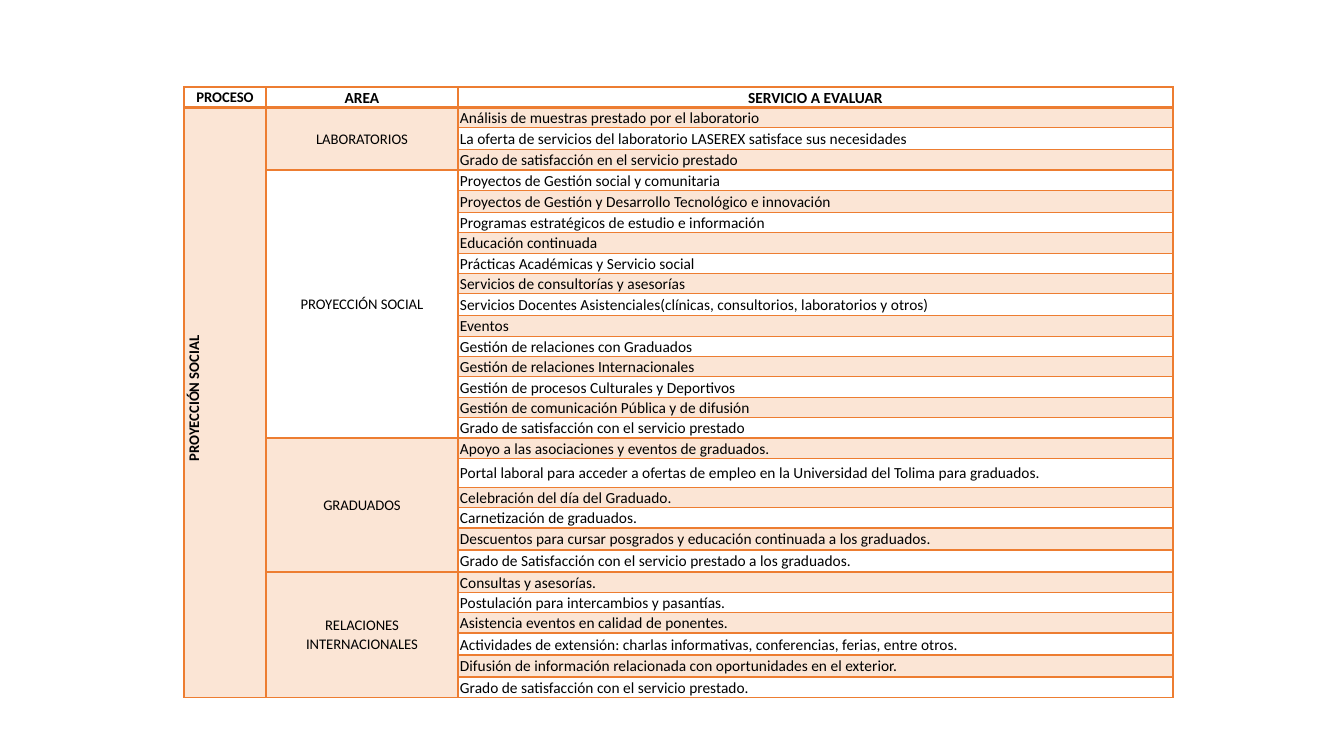
from lxml import etree
from pptx import Presentation
from pptx import util as u
from pptx.dml.color import RGBColor
from pptx.enum import text
from pptx.oxml import ns

HEADERS = [("PROCESO", 10.5), ("AREA", 11), ("SERVICIO A EVALUAR", 11)]
PROCESS = "PROYECCIÓN SOCIAL"
AREAS = [
    ("LABORATORIOS", [
        "Análisis de muestras prestado por el laboratorio",
        "La oferta de servicios del laboratorio LASEREX satisface sus necesidades",
        "Grado de satisfacción en el servicio prestado",
    ]),
    ("PROYECCIÓN SOCIAL", [
        "Proyectos de Gestión social y comunitaria",
        "Proyectos de Gestión y Desarrollo Tecnológico e innovación",
        "Programas estratégicos de estudio e información",
        "Educación continuada",
        "Prácticas Académicas y Servicio social",
        "Servicios de consultorías y asesorías",
        "Servicios Docentes Asistenciales(clínicas, consultorios, laboratorios y otros)",
        "Eventos",
        "Gestión de relaciones con Graduados",
        "Gestión de relaciones Internacionales",
        "Gestión de procesos Culturales y Deportivos",
        "Gestión de comunicación Pública y de difusión",
        "Grado de satisfacción con el servicio prestado",
    ]),
    ("GRADUADOS", [
        "Apoyo a las asociaciones y eventos de graduados.",
        "Portal laboral para acceder a ofertas de empleo en la Universidad del Tolima para graduados.",
        "Celebración del día del Graduado.",
        "Carnetización de graduados.",
        "Descuentos para cursar posgrados y educación continuada a los graduados.",
        "Grado de Satisfacción con el servicio prestado a los graduados.",
    ]),
    ("RELACIONES INTERNACIONALES", [
        "Consultas y asesorías.",
        "Postulación para intercambios y pasantías.",
        "Asistencia eventos en calidad de ponentes.",
        "Actividades de extensión: charlas informativas, conferencias, ferias, entre otros.",
        "Difusión de información relacionada con oportunidades en el exterior.",
        "Grado de satisfacción con el servicio prestado.",
    ]),
]
COLUMN_WIDTHS = [82, 192, 715]
ROW_HEIGHT = 20
TALL_ROWS = {2: 22, 5: 22, 10: 22, 18: 29, 21: 22, 22: 22, 26: 22, 27: 22}
BOTTOM_ROWS = (16, 28)
ORANGE = RGBColor(0xED, 0x7D, 0x31)
BLACK = RGBColor(0, 0, 0)
CENTER = text.PP_ALIGN.CENTER


def px(length):
    return u.Emu(round(length * 914400 / 100.8))


def write(cell, words, size, bold=False, align=None):
    paragraph = cell.text_frame.paragraphs[0]
    paragraph.alignment = align
    paragraph.line_spacing = 1.07
    run = paragraph.add_run()
    run.text = words
    run.font.name = "Calibri"
    run.font.size = u.Pt(size)
    run.font.bold = bold
    run.font.color.rgb = BLACK


def style(cell, row):
    cell.margin_left = cell.margin_right = px(2)
    cell.margin_top = cell.margin_bottom = 0
    cell.vertical_anchor = (text.MSO_ANCHOR.BOTTOM if row in BOTTOM_ROWS
                            else text.MSO_ANCHOR.MIDDLE)
    properties = cell._tc.get_or_add_tcPr()
    for side in "LRTB":
        line = etree.SubElement(properties, ns.qn("a:ln" + side))
        line.set("w", str(u.Pt(2 if row == 0 and side == "B" else 1)))
        paint = etree.SubElement(line, ns.qn("a:solidFill"))
        etree.SubElement(paint, ns.qn("a:srgbClr")).set("val", str(ORANGE))
    if row % 2:
        cell.fill.solid()
        cell.fill.fore_color.rgb = ORANGE
        color = properties.find(ns.qn("a:solidFill"))[0]
        etree.SubElement(color, ns.qn("a:alpha")).set("val", "20000")
    else:
        cell.fill.background()


presentation = Presentation()
presentation.slide_width = px(1344)
presentation.slide_height = px(756)
slide = presentation.slides.add_slide(presentation.slide_layouts[6])

row_count = 1 + sum(len(services) for _, services in AREAS)
heights = [TALL_ROWS.get(row, ROW_HEIGHT) for row in range(row_count)]
frame = slide.shapes.add_table(row_count, len(COLUMN_WIDTHS), px(184), px(87),
                               px(sum(COLUMN_WIDTHS)), px(sum(heights)))
table = frame.table
table.first_row = table.horz_banding = False
for column, width in zip(table.columns, COLUMN_WIDTHS):
    column.width = px(width)
for row, height in enumerate(heights):
    table.rows[row].height = px(height)
    for column in range(len(COLUMN_WIDTHS)):
        style(table.cell(row, column), row)

for column, (header, size) in enumerate(HEADERS):
    write(table.cell(0, column), header, size, True, CENTER)

process = table.cell(1, 0)
process.merge(table.cell(row_count - 1, 0))
process._tc.get_or_add_tcPr().set("vert", "vert270")
write(process, PROCESS, 10.5, True, CENTER)
process.text_frame.paragraphs[0]._p.get_or_add_pPr().set("marL", str(px(8)))

row = 1
for area, services in AREAS:
    area_cell = table.cell(row, 1)
    area_cell.merge(table.cell(row + len(services) - 1, 1))
    write(area_cell, area, 10.5, align=CENTER)
    for service in services:
        write(table.cell(row, 2), service, 11)
        row += 1

presentation.save("out.pptx")
